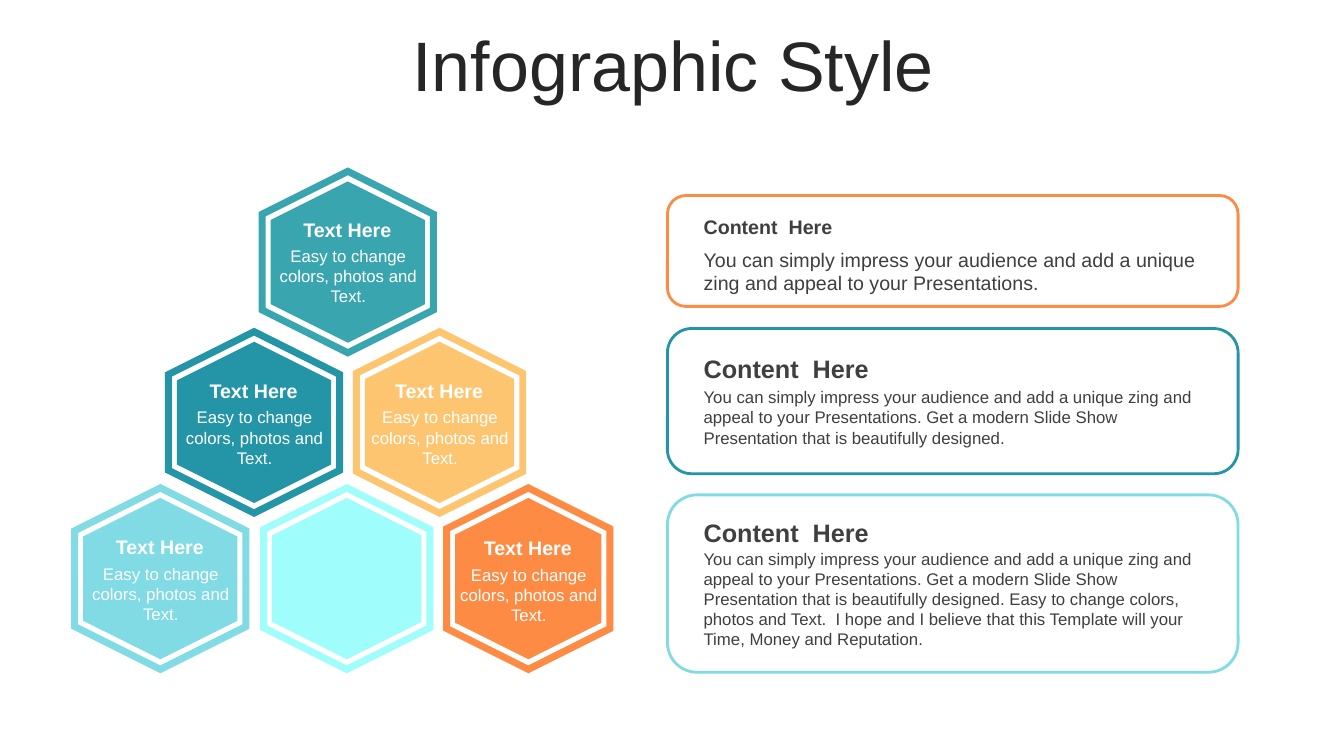
from lxml import etree
from pptx import Presentation
from pptx.dml.color import RGBColor
from pptx.enum.shapes import MSO_SHAPE
from pptx.enum.text import MSO_ANCHOR, MSO_AUTO_SIZE, PP_ALIGN
from pptx.oxml.ns import qn
from pptx.util import Emu, Pt

SCALE = 9144  # EMU per px, 100 px to the inch
FONT = "Arial"
COLORS = {
    "title": "262626",
    "text": "3F3F3F",
    "white": "FFFFFF",
    "teal": "39A5AE",
    "deep teal": "2395A6",
    "amber": "FDC56F",
    "sky": "80DBE4",
    "aqua": "9FFDFB",
    "orange": "FE8B44",
}

# Hexagons: centre x, centre y, width, colour, label (left, top) if it has one
HEXAGONS = [
    (524, 574, 162, "orange", (439, 527)),
    (436, 419, 165, "amber", (351, 371)),
    (344, 574, 165, "aqua", None),
    (159, 574, 170, "sky", (74, 526)),
    (252, 419, 170, "deep teal", (167, 371)),
    (345, 260, 170, "teal", (260, 211)),
]
HEXAGON_HEIGHT, INNER_HEIGHT, RIM = 180, 160, 17
LABEL_WIDTH = 169
LABEL_HEADING = "Text Here"
LABEL_BODY = "Easy to change colors, photos and Text."

# Panels: top, height, colour, heading (top, height, size), body (top, height, size), text
PANEL_LEFT, PANEL_WIDTH = 662, 566
TEXT_LEFT, TEXT_WIDTH = 688, 525
PANEL_HEADING = "Content  Here"
IMPRESS = "You can simply impress your audience and add a unique zing and appeal to your Presentations."
MODERN = IMPRESS + " Get a modern Slide Show  Presentation that is beautifully designed."
BELIEVE = (MODERN + " Easy to change colors, photos and Text.  I hope and I believe"
           " that this Template will your Time, Money and Reputation.")
PANELS = [
    (194, 110, "orange", (208, 34, 14), (241, 57, 14), IMPRESS),
    (326, 144, "deep teal", (346, 30, 18), (379, 71, 12), MODERN),
    (491, 176, "sky", (508, 30, 18), (539, 111, 12), BELIEVE),
]


def px(*lengths):
    return [Emu(length * SCALE) for length in lengths]


def rgb(name):
    return RGBColor.from_string(COLORS[name])


class SlideBuilder:
    def __init__(self, deck):
        self.page = deck.slides.add_slide(deck.slide_layouts[5])

    def style(self, paragraph, size, color, bold=False, align=PP_ALIGN.LEFT):
        paragraph.alignment = align
        font = paragraph.font
        font.name, font.size, font.bold = FONT, Pt(size), bold
        font.color.rgb = rgb(color)

    def title(self, left, top, width, height, text):
        box = self.page.shapes.title
        box.left, box.top, box.width, box.height = px(left, top, width, height)
        frame = box.text_frame
        frame.text = text
        frame.word_wrap = True
        frame.auto_size = MSO_AUTO_SIZE.NONE
        frame.vertical_anchor = MSO_ANCHOR.MIDDLE
        paragraph = frame.paragraphs[0]
        paragraph.line_spacing = 0.8
        self.style(paragraph, 50, "title", align=PP_ALIGN.CENTER)

    def shape(self, kind, left, top, width, height, fill=None, line=None, weight=2):
        shape = self.page.shapes.add_shape(kind, *px(left, top, width, height))
        shape.shadow.inherit = False
        if fill:
            shape.fill.solid()
            shape.fill.fore_color.rgb = rgb(fill)
        else:
            shape.fill.background()
        if line:
            shape.line.color.rgb = rgb(line)
            shape.line.width = Pt(weight)
            # Sharp corners
            outline = shape.element.spPr.find(qn("a:ln"))
            etree.SubElement(outline, qn("a:miter"), lim="800000")
        else:
            shape.line.fill.background()
        return shape

    def hexagon(self, center_x, center_y, width, height, **paint):
        # Laid flat, then turned so that a point is on top
        shape = self.shape(MSO_SHAPE.HEXAGON, center_x - height / 2,
                           center_y - width / 2, height, width, **paint)
        shape.rotation = 270

    def text(self, left, top, width, height, text, size, color, **looks):
        box = self.page.shapes.add_textbox(*px(left, top, width, height))
        frame = box.text_frame
        frame.word_wrap = True
        frame.auto_size = MSO_AUTO_SIZE.SHAPE_TO_FIT_TEXT
        frame.text = text
        self.style(frame.paragraphs[0], size, color, **looks)


def main():
    deck = Presentation()
    deck.slide_width, deck.slide_height = px(1333, 750)
    builder = SlideBuilder(deck)
    builder.title(35, 31, 1266, 79, "Infographic Style")

    # Pyramid of hexagons with labels
    for center_x, center_y, width, color, label in HEXAGONS:
        builder.hexagon(center_x, center_y, width, HEXAGON_HEIGHT, line=color, weight=5)
        builder.hexagon(center_x, center_y, width - RIM, INNER_HEIGHT, fill=color)
        if label:
            left, top = label
            builder.text(left, top, LABEL_WIDTH, 33, LABEL_HEADING, 14, "white",
                         bold=True, align=PP_ALIGN.CENTER)
            builder.text(left + 1, top + 28, LABEL_WIDTH, 69, LABEL_BODY, 12, "white",
                         align=PP_ALIGN.CENTER)

    # Outlined panels with heading and body
    for top, height, color, heading, body, words in PANELS:
        builder.shape(MSO_SHAPE.ROUNDED_RECTANGLE, PANEL_LEFT, top, PANEL_WIDTH, height,
                      line=color)
        for (text_top, text_height, size), text, bold in (
                (heading, PANEL_HEADING, True), (body, words, False)):
            builder.text(TEXT_LEFT, text_top, TEXT_WIDTH, text_height, text, size, "text",
                         bold=bold)

    deck.save("out.pptx")


if __name__ == "__main__":
    main()
